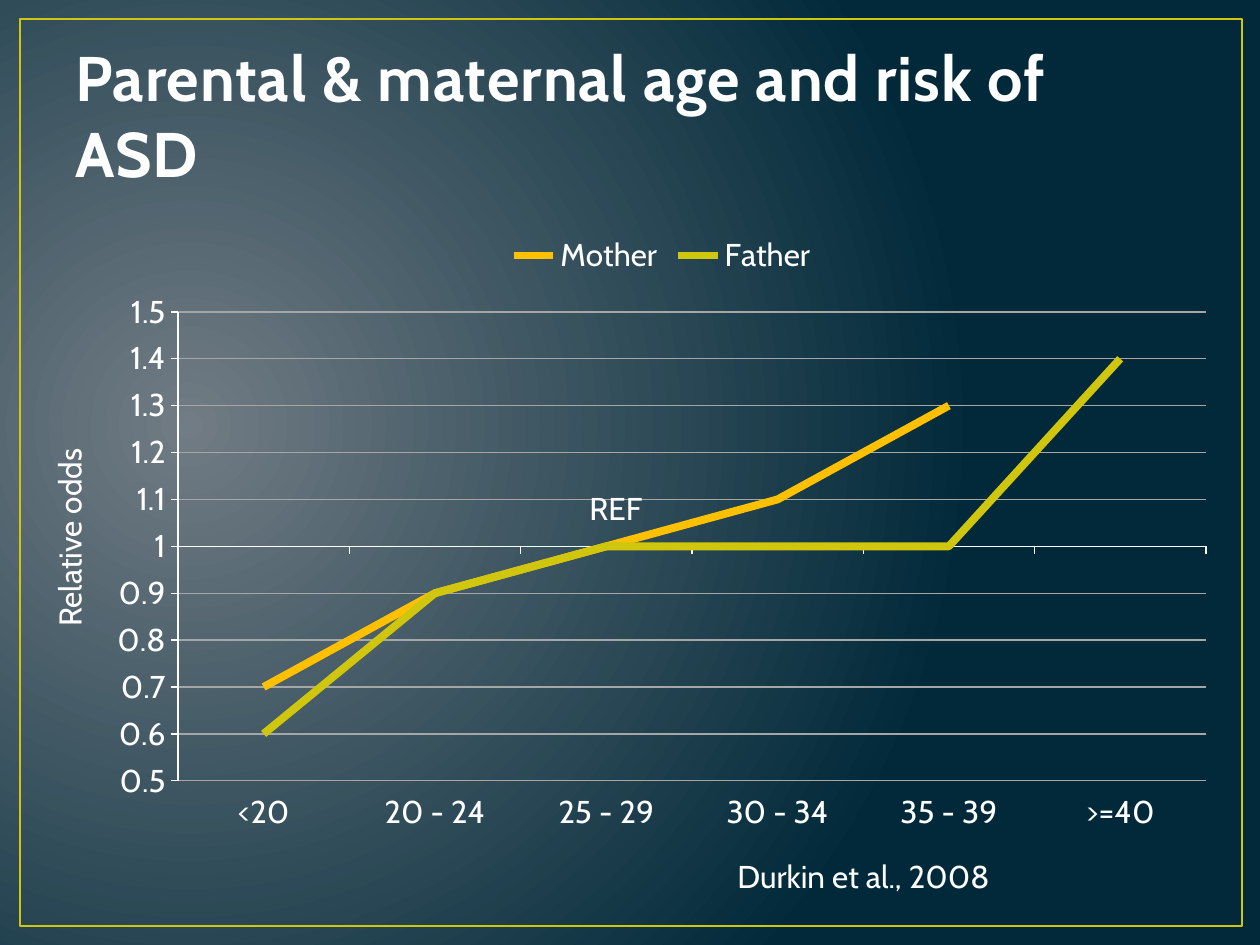
from dataclasses import dataclass

from lxml import etree
from pptx import Presentation, util as u
from pptx.chart.data import CategoryChartData
from pptx.dml.color import RGBColor
from pptx.enum import chart as ch, shapes, text
from pptx.oxml import parse_xml
from pptx.oxml.ns import nsdecls, qn


@dataclass(frozen=True)
class Theme:
    """Hold the colours, font and type sizes."""
    font: str = "Cabin"
    head: int = 36
    body: int = 18
    white: str = "FFFFFF"
    title: str = "FEFEFE"
    edge: str = "384F55"
    grid: str = "A6A6A6"
    lime: str = "CFC60D"
    gold: str = "FFC000"
    glow: str = "717C84"
    deep: str = "01293A"


T = Theme()
CATS = ["<20", "20 - 24", "25 - 29", "30 - 34", "35 - 39", ">=40"]
ODDS = [
    ("Mother", T.gold, [0.7, 0.9, 1, 1.1, 1.3, None]),
    ("Father", T.lime, [0.6, 0.9, 1, 1, 1, 1.4]),
]


def px(n):
    """Turn pixels into EMU."""
    return u.Emu(round(n * 914400 / 126))


def rgb(code):
    """Turn a hex code into a colour."""
    return RGBColor.from_string(code)


def style(font, size=T.body, color=T.white, bold=False):
    """Set the face, size and colour of a font."""
    font.name, font.size, font.bold = T.font, u.Pt(size), bold
    font.color.rgb = rgb(color)


def stroke(line, color, width):
    """Set the colour and width of a line."""
    line.color.rgb = rgb(color)
    line.width = u.Pt(width)


def ground(slide):
    """Fill the background with a round glow."""
    fill = slide.background.fill
    fill.gradient()
    for stop, color in zip(fill.gradient_stops, (T.glow, T.deep)):
        stop.color.rgb = rgb(color)
    grad = slide.element.find(".//" + qn("a:gradFill"))
    grad.remove(grad.find(qn("a:lin")))
    grad.append(parse_xml(
        f'<a:path {nsdecls("a")} path="circle">'
        '<a:fillToRect l="15000" t="50000" r="85000" b="60000"/></a:path>'))


def frame(slide, box):
    """Draw the thin border."""
    rect = slide.shapes.add_shape(shapes.MSO_SHAPE.RECTANGLE, *map(px, box))
    rect.shadow.inherit = False
    rect.fill.background()
    stroke(rect.line, T.lime, 1.5)


def label(slide, box, words, turn=0):
    """Place a text box and return it with its run."""
    shape = slide.shapes.add_textbox(*map(px, box))
    shape.rotation = turn
    shape.text_frame.word_wrap = True
    run = shape.text_frame.paragraphs[0].add_run()
    run.text = words
    style(run.font)
    return shape, run


def title(slide, box, words):
    """Place the outlined heading at the foot of its box."""
    shape, run = label(slide, box, words)
    shape.text_frame.vertical_anchor = text.MSO_ANCHOR.BOTTOM
    style(run.font, T.head, T.title, True)
    props = run.font._element
    props.set("spc", "50")
    props.insert(0, parse_xml(
        f'<a:ln {nsdecls("a")} w="13335"><a:solidFill>'
        f'<a:srgbClr val="{T.edge}"/></a:solidFill></a:ln>'))


def inner(chart, box, area):
    """Fix the plot area, in px from the corner of the chart."""
    plot = chart._chartSpace.find(".//" + qn("c:plotArea"))
    old = plot.find(qn("c:layout"))
    if old is not None:
        plot.remove(old)
    layout = etree.Element(qn("c:layout"))
    manual = etree.SubElement(layout, qn("c:manualLayout"))
    rows = [("layoutTarget", "inner"), ("xMode", "edge"), ("yMode", "edge")]
    rows += [(k, f"{n / box[2 + i % 2]:.4f}")
             for i, (k, n) in enumerate(zip("xywh", area))]
    for tag, val in rows:
        etree.SubElement(manual, qn("c:" + tag)).set("val", val)
    plot.insert(0, layout)


def graph(slide, box):
    """Place the line chart of odds by age."""
    data = CategoryChartData()
    data.categories = CATS
    for name, _, vals in ODDS:
        data.add_series(name, vals)
    chart = slide.shapes.add_chart(
        ch.XL_CHART_TYPE.LINE, *map(px, box), data).chart
    style(chart.font)
    chart.has_title = False
    chart.has_legend = True
    chart.legend.position = ch.XL_LEGEND_POSITION.TOP
    chart.legend.include_in_layout = False
    style(chart.legend.font)
    plot = chart.plots[0]
    plot.vary_by_categories = False
    for line, (_, color, _) in zip(plot.series, ODDS):
        line.smooth = False
        line.marker.style = ch.XL_MARKER_STYLE.NONE
        stroke(line.format.line, color, 4.5)
    cat, val = chart.category_axis, chart.value_axis
    for axis in (cat, val):
        style(axis.tick_labels.font)
        axis.major_tick_mark = ch.XL_TICK_MARK.OUTSIDE
        axis.minor_tick_mark = ch.XL_TICK_MARK.NONE
        stroke(axis.format.line, T.white, 0.75)
    cat.tick_label_position = ch.XL_TICK_LABEL_POSITION.LOW
    val.minimum_scale, val.maximum_scale = 0.5, 1.5
    val.major_unit = 0.1
    val.crosses_at = 1
    val.tick_labels.number_format = "General"
    val.tick_labels.number_format_is_linked = False
    val.has_major_gridlines = True
    stroke(val.major_gridlines.format.line, T.grid, 0.75)
    inner(chart, box, (83, 91, 1028, 469))


def main():
    """Build and save the slide."""
    deck = Presentation()
    deck.slide_width, deck.slide_height = px(1260), px(945)
    slide = deck.slides.add_slide(deck.slide_layouts[6])
    ground(slide)
    frame(slide, (20, 19, 1222, 907))
    title(slide, (63, 38, 1134, 158),
          "Parental & maternal age and risk of ASD")
    graph(slide, (95, 221, 1134, 624))
    label(slide, (577, 483, 116, 50), "REF")
    label(slide, (-79, 466, 296, 50), "Relative odds", 270)
    label(slide, (725, 851, 399, 50), "Durkin et al., 2008")
    deck.save("out.pptx")


if __name__ == "__main__":
    main()
